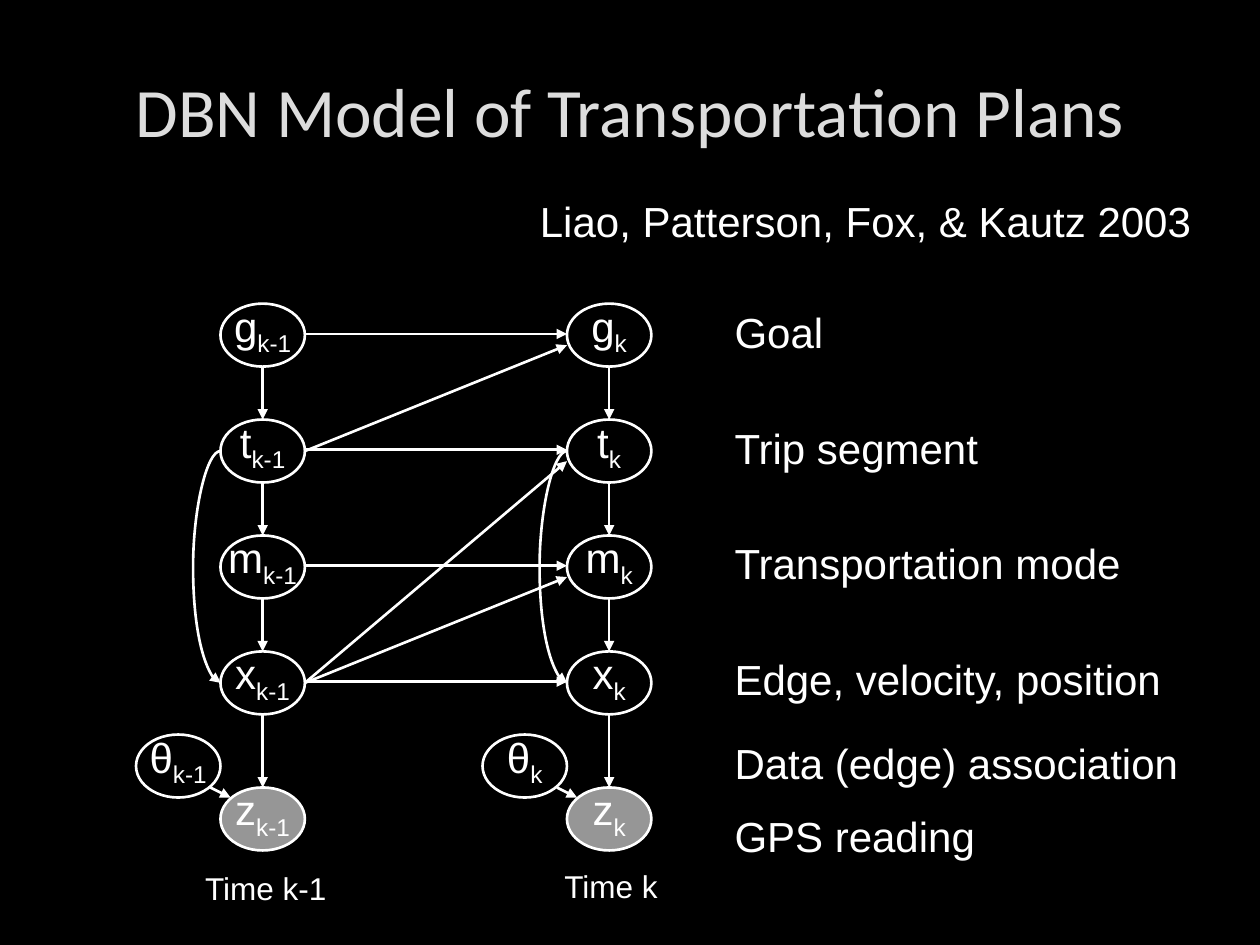
from lxml.etree import SubElement
from pptx import Presentation
from pptx.dml.color import RGBColor
from pptx.enum.shapes import MSO_CONNECTOR, MSO_SHAPE
from pptx.enum.text import MSO_ANCHOR, MSO_AUTO_SIZE, PP_ALIGN
from pptx.oxml.ns import qn
from pptx.util import Emu, Inches, Pt

WHITE, GREY, TITLE_GREY, BLACK = "FFFFFF", "969696", "DDDDDD", "000000"

# Grid: one column per time slice, one row per variable
COLS = {"k-1": 1.75, "k": 4.5}
TOP, PITCH = 2.41, 0.92
NODE_W, NODE_H = 0.67, 0.5
ROWS = {name: TOP + i * PITCH for i, name in enumerate("gtmx")}
ROWS.update({"θ": 5.83, "z": 6.25})
LABEL_X = 5.83
LABELS = [  # text, top, width
    ("Goal", ROWS["g"] + 0.02, 0.75),
    ("Trip segment", ROWS["t"] + 0.02, 2),
    ("Transportation mode", ROWS["m"] + 0.02, 3.15),
    ("Edge, velocity, position", ROWS["x"] + 0.02, 3.5),
    ("Data (edge) association", ROWS["θ"] + 0.02, 3.6),
    ("GPS reading", 6.43, 1.95),
]


def color(value):
    return RGBColor.from_string(value)


def style_run(r, size, value=WHITE, font="Arial"):
    r.font.size = Pt(size)
    r.font.name = font
    r.font.color.rgb = color(value)


def set_margins(tf, left, top, right, bottom):
    tf.margin_left, tf.margin_top = Inches(left), Inches(top)
    tf.margin_right, tf.margin_bottom = Inches(right), Inches(bottom)


def add_title(s, text):
    sp = s.shapes.title
    sp.left, sp.top, sp.width, sp.height = map(Inches, (0.75, 0.25, 8.5, 1))
    tf = sp.text_frame
    tf.text = text
    tf.auto_size = MSO_AUTO_SIZE.NONE
    tf.vertical_anchor = MSO_ANCHOR.BOTTOM
    p = tf.paragraphs[0]
    p.alignment = PP_ALIGN.CENTER
    style_run(p.runs[0], 39.6, TITLE_GREY, "Calibri")


def add_text(s, text, x, y, w, h=0.4, size=24, align=PP_ALIGN.LEFT, inset=True):
    tf = s.shapes.add_textbox(*map(Inches, (x, y, w, h))).text_frame
    tf.word_wrap = False
    tf.auto_size = MSO_AUTO_SIZE.NONE
    if not inset:
        set_margins(tf, 0, 0, 0, 0)
    tf.text = text
    p = tf.paragraphs[0]
    p.alignment = align
    style_run(p.runs[0], size)


def add_node(s, name, sub, x, y):
    """Ellipse holding a variable name with a subscript; observed z is filled."""
    sp = s.shapes.add_shape(MSO_SHAPE.OVAL, *map(Inches, (x, y, NODE_W, NODE_H)))
    sp.shadow.inherit = False
    if name == "z":
        sp.fill.solid()
        sp.fill.fore_color.rgb = color(GREY)
    else:
        sp.fill.background()
    sp.line.color.rgb = color(WHITE)
    sp.line.width = Pt(1.5)
    tf = sp.text_frame
    tf.word_wrap = False
    tf.vertical_anchor = MSO_ANCHOR.MIDDLE
    set_margins(tf, 0.1, 0, 0.1, 0.1)
    p = tf.paragraphs[0]
    p.alignment = PP_ALIGN.CENTER
    for text in (name, sub):
        r = p.add_run()
        r.text = text
        style_run(r, 24)
    r.font._element.set("baseline", "-25000")


def add_arrow(s, x1, y1, x2, y2, kind=MSO_CONNECTOR.STRAIGHT):
    c = s.shapes.add_connector(kind, *map(Inches, (x1, y1, x2, y2)))
    c.line.color.rgb = color(WHITE)
    c.line.width = Pt(1.5)
    SubElement(c.line._get_or_add_ln(), qn("a:tailEnd"), type="triangle")
    SubElement(c._element.spPr, qn("a:effectLst"))
    return c


def add_arc(s, x, y1, y2, bulge=0.24):
    """Curved arrow between two points on one vertical, bulging to the left."""
    c = add_arrow(s, x, y1, x, y2, MSO_CONNECTOR.CURVE)
    c.width = Emu(1588)  # the bend is a share of the width, so it cannot be 0
    bend = -round(Inches(bulge) / c.width * 100000)
    guides = c._element.spPr.find(qn("a:prstGeom")).find(qn("a:avLst"))
    SubElement(guides, qn("a:gd"), name="adj1", fmla=f"val {bend}")


def add_slice(s, sub, x):
    """All nodes and inner arrows of one time slice."""
    for name, y in ROWS.items():
        add_node(s, name, sub, x - NODE_W if name == "θ" else x, y)
    mid = x + NODE_W / 2
    for upper, lower in zip("gtmx", "tmxz"):
        add_arrow(s, mid, ROWS[upper] + NODE_H, mid, ROWS[lower])
    add_arrow(s, x - 0.08, 6.25, x + 0.08, 6.33)
    add_arc(s, x, ROWS["t"] + NODE_H / 2, ROWS["x"] + NODE_H / 2)


def add_transitions(s):
    """Arrows from the earlier slice to the later one."""
    left, right = COLS["k-1"] + NODE_W, COLS["k"]
    for name in "gtmx":
        y = ROWS[name] + 0.24
        add_arrow(s, left, y, right, y)
    for source, target in ("tg", "xt", "xm"):
        add_arrow(s, left, ROWS[source] + 0.25, right, ROWS[target] + 0.33)


def main():
    prs = Presentation()
    prs.slide_width, prs.slide_height = Inches(10), Inches(7.5)
    s = prs.slides.add_slide(prs.slide_layouts[5])
    s.background.fill.solid()
    s.background.fill.fore_color.rgb = color(BLACK)

    # Heading and citation
    add_title(s, "DBN Model of Transportation Plans")
    add_text(s, "Liao, Patterson, Fox, & Kautz 2003", 4.16, 1.5, 5.42, 0.5,
             align=PP_ALIGN.CENTER)

    # Network
    for sub, x in COLS.items():
        add_slice(s, sub, x)
    add_transitions(s)

    # Row meanings and time captions
    for text, y, w in LABELS:
        add_text(s, text, LABEL_X, y, w, inset=False)
    add_text(s, "Time k-1", 1.53, 6.85, 1.17, size=18)
    add_text(s, "Time k", 4.38, 6.83, 0.95, size=18)
    prs.save("out.pptx")


if __name__ == "__main__":
    main()
